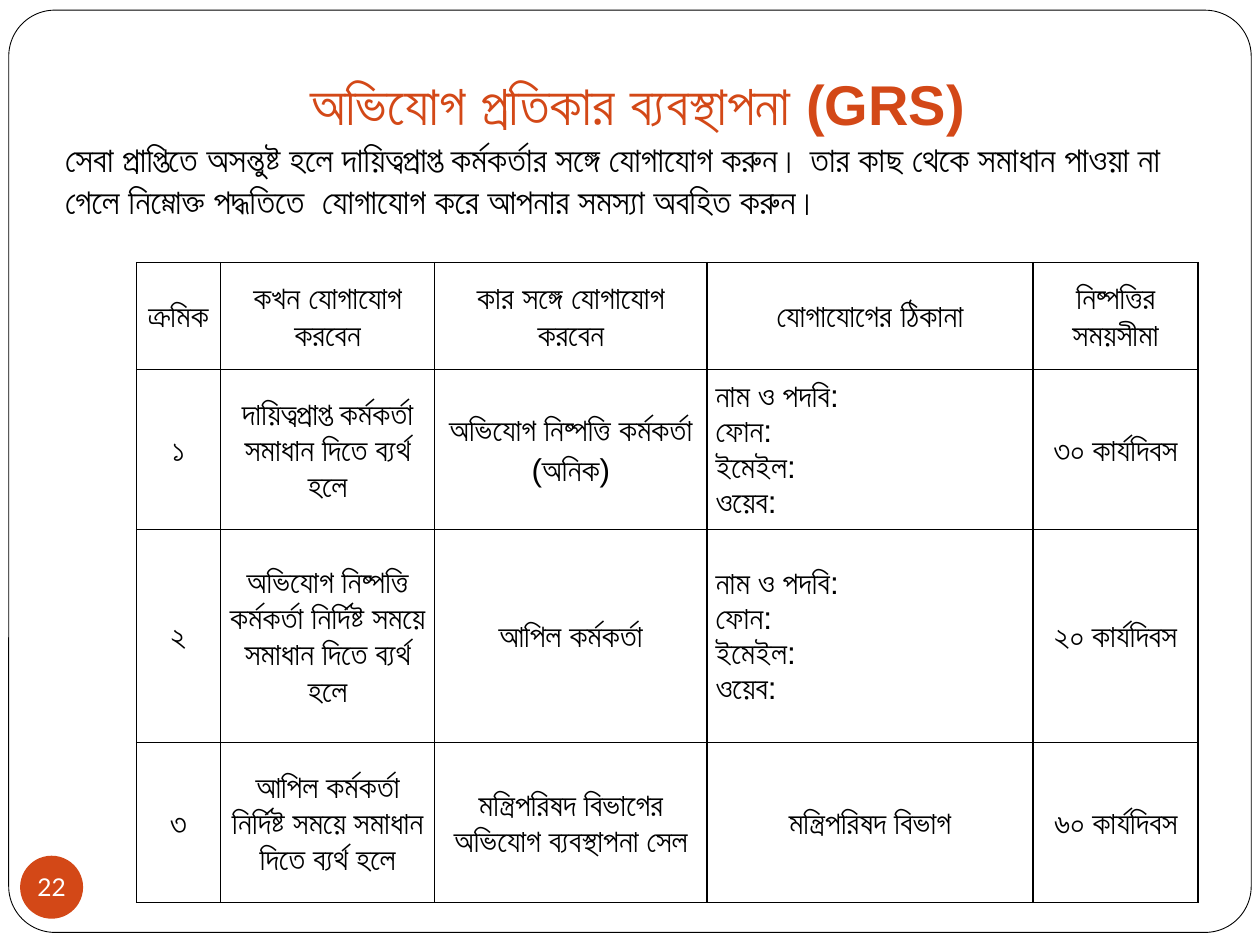
"""Build the grievance redress slide with its contact table."""
from dataclasses import dataclass

from lxml import etree
from pptx import Presentation
from pptx.dml.color import RGBColor
from pptx.enum import shapes, text
from pptx.oxml import ns
from pptx.util import Pt

MID = text.MSO_ANCHOR.MIDDLE
CENTER = text.PP_ALIGN.CENTER
LEFT = text.PP_ALIGN.LEFT
INK, RUST, WHITE = "000000", "D34817", "FFFFFF"


@dataclass
class Style:
    size: float
    color: str = INK
    bold: bool = False
    font: str = "Arial"


@dataclass
class Row:
    height: float
    cells: list[str]


HEAD = Style(18, bold=True)
BODY = Style(18)
TITLE = Style(32, RUST, True)
INTRO = Style(20)
BADGE = Style(14, WHITE, font="Lato")

CONTACT = "নাম ও পদবি:\nফোন:\nইমেইল:\nওয়েব:"
COLS = [48, 122.4, 155.5, 186.5, 94.3]
ROWS = [
    Row(61.2, ["ক্রমিক", "কখন যোগাযোগ করবেন", "কার সঙ্গে যোগাযোগ করবেন",
               "যোগাযোগের ঠিকানা", "নিষ্পত্তির সময়সীমা"]),
    Row(91.4, ["১", "দায়িত্বপ্রাপ্ত কর্মকর্তা সমাধান দিতে ব্যর্থ হলে",
               "অভিযোগ নিষ্পত্তি কর্মকর্তা (অনিক)", CONTACT, "৩০ কার্যদিবস"]),
    Row(121.7, ["২", "অভিযোগ নিষ্পত্তি কর্মকর্তা নির্দিষ্ট সময়ে সমাধান দিতে ব্যর্থ হলে",
                "আপিল কর্মকর্তা", CONTACT, "২০ কার্যদিবস"]),
    Row(91.4, ["৩", "আপিল কর্মকর্তা নির্দিষ্ট সময়ে সমাধান দিতে ব্যর্থ হলে",
               "মন্ত্রিপরিষদ বিভাগের অভিযোগ ব্যবস্থাপনা সেল",
               "মন্ত্রিপরিষদ বিভাগ", "৬০ কার্যদিবস"]),
]


def paint(target, color: str) -> None:
    target.fill.solid()
    target.fill.fore_color.rgb = RGBColor.from_string(color)


def add_run(para, words: str, style: Style) -> None:
    run = para.add_run()
    run.text = words
    font = run.font
    font.name, font.size, font.bold = style.font, Pt(style.size), style.bold
    font.color.rgb = RGBColor.from_string(style.color)


def add_shape(slide, kind, left: float, top: float, width: float, height: float, fill: str):
    shape = slide.shapes.add_shape(kind, Pt(left), Pt(top), Pt(width), Pt(height))
    shape.shadow.inherit = False
    paint(shape, fill)
    return shape


def add_frame(slide) -> None:
    frame = add_shape(slide, shapes.MSO_SHAPE.ROUNDED_RECTANGLE, 5, 5.8, 710, 527, WHITE)
    frame.adjustments[0] = 0.05
    frame.line.width = Pt(0.5)
    paint(frame.line, INK)


def add_border(cell) -> None:
    props = cell._tc.get_or_add_tcPr()
    for side in ("a:lnL", "a:lnR", "a:lnT", "a:lnB"):
        line = etree.SubElement(props, ns.qn(side), w=str(Pt(1)))
        fill = etree.SubElement(line, ns.qn("a:solidFill"))
        etree.SubElement(fill, ns.qn("a:srgbClr"), val=INK)


def fill_cell(cell, words: str, style: Style, first: bool) -> None:
    add_border(cell)
    cell.fill.background()
    cell.vertical_anchor = MID
    cell.margin_left = cell.margin_right = Pt(5)
    cell.margin_top = cell.margin_bottom = Pt(0)
    listed = words == CONTACT
    for i, line in enumerate(words.split("\n")):
        para = cell.text_frame.add_paragraph() if i else cell.text_frame.paragraphs[0]
        para.alignment = LEFT if listed else CENTER
        para.line_spacing = 1.0 if listed else 1.15
        if first:
            para.space_after = Pt(10)
        add_run(para, line, style)


def add_table(slide) -> None:
    high = sum(row.height for row in ROWS)
    table = slide.shapes.add_table(len(ROWS), len(COLS), Pt(78), Pt(150),
                                   Pt(sum(COLS)), Pt(high)).table
    table.first_row = table.horz_banding = False
    for col, width in zip(table.columns, COLS):
        col.width = Pt(width)
    for r, row in enumerate(ROWS):
        table.rows[r].height = Pt(row.height)
        for c, words in enumerate(row.cells):
            fill_cell(table.cell(r, c), words, BODY if r else HEAD, r > 0 and c == 0)


def add_title(slide) -> None:
    title = slide.shapes.title
    slide.shapes._spTree.append(title._element)
    title.left, title.top, title.width, title.height = Pt(30), Pt(36), Pt(660), Pt(94.3)
    frame = title.text_frame
    frame.word_wrap, frame.vertical_anchor = True, MID
    frame.auto_size = text.MSO_AUTO_SIZE.NONE
    head, intro = frame.paragraphs[0], frame.add_paragraph()
    head.alignment, intro.alignment = CENTER, LEFT
    add_run(head, " অভিযোগ প্রতিকার ব্যবস্থাপনা (GRS)", TITLE)
    add_run(intro, "সেবা প্রাপ্তিতে অসন্তুষ্ট হলে দায়িত্বপ্রাপ্ত কর্মকর্তার সঙ্গে যোগাযোগ করুন। "
            "তার কাছ থেকে সমাধান পাওয়া না গেলে নিম্নোক্ত পদ্ধতিতে  যোগাযোগ করে "
            "আপনার সমস্যা অবহিত করুন।", INTRO)


def add_badge(slide) -> None:
    badge = add_shape(slide, shapes.MSO_SHAPE.OVAL, 11.5, 489, 36, 36, RUST)
    badge.line.fill.background()
    frame = badge.text_frame
    frame.word_wrap, frame.vertical_anchor = False, MID
    frame.margin_left = frame.margin_right = frame.margin_top = frame.margin_bottom = Pt(0)
    para = frame.paragraphs[0]
    para.alignment = CENTER
    add_run(para, "22", BADGE)


def main() -> None:
    deck = Presentation()
    deck.slide_width, deck.slide_height = Pt(720), Pt(540)
    slide = deck.slides.add_slide(deck.slide_layouts[5])
    paint(slide.background, WHITE)
    add_frame(slide)
    add_table(slide)
    add_title(slide)
    add_badge(slide)
    deck.save("out.pptx")


if __name__ == "__main__":
    main()
